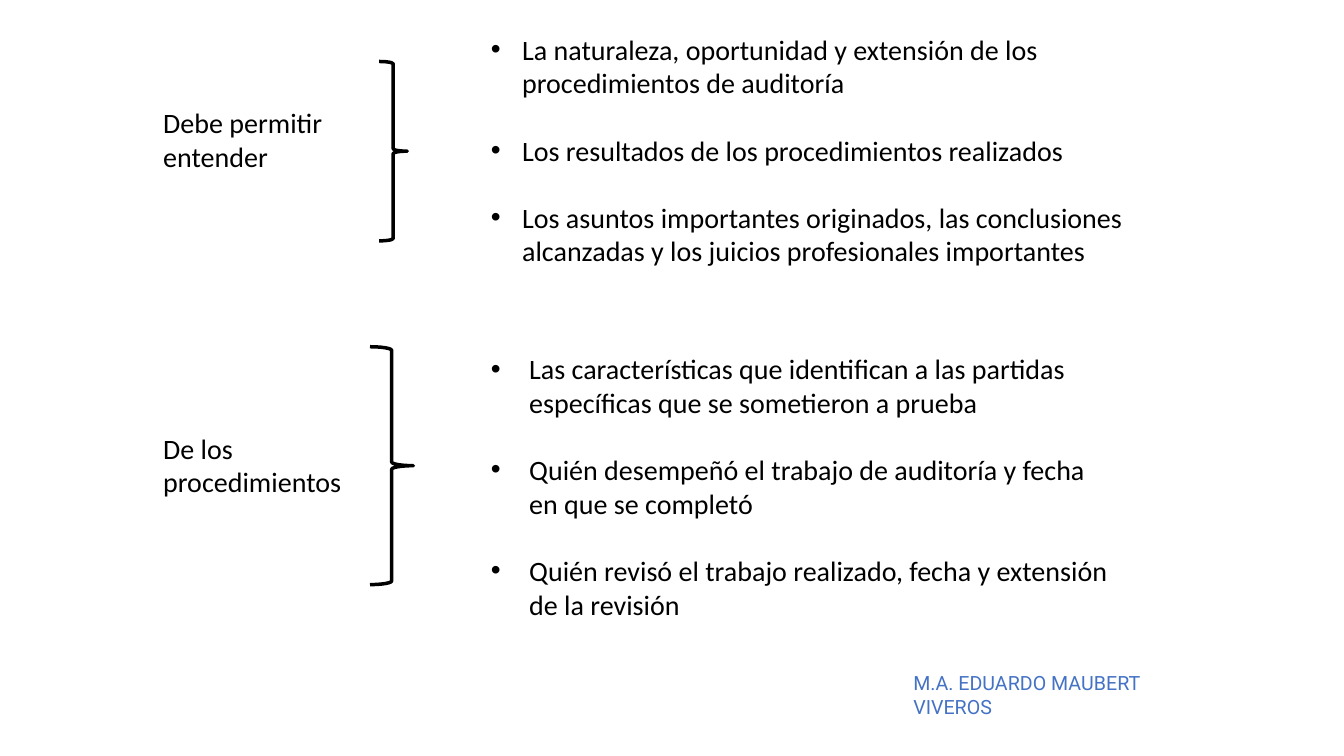
from dataclasses import dataclass

from lxml import etree
from pptx import Presentation
from pptx.dml.color import RGBColor
from pptx.enum.shapes import MSO_SHAPE
from pptx.enum.text import MSO_AUTO_SIZE
from pptx.oxml.ns import qn
from pptx.slide import Slide
from pptx.util import Inches, Pt

BRACE = MSO_SHAPE.RIGHT_BRACE
GROW = MSO_AUTO_SIZE.SHAPE_TO_FIT_TEXT
COLORS = {"ink": "000000", "blue": "4472C4"}

Rect = tuple[float, float, float, float]


@dataclass(frozen=True)
class Text:
    rect: Rect
    lines: tuple[str, ...]
    indent: float = 0
    font: str = "Calibri"
    size: int = 20
    color: str = "ink"


@dataclass(frozen=True)
class Group:
    label: Text
    brace: Rect
    points: Text


GROUPS = (
    Group(
        Text((1.52, 1, 1.81, 0.77), ("Debe permitir entender",)),
        (3.76, 0.61, 0.28, 1.78),
        Text((4.77, 0.27, 7.01, 2.46), (
            "La naturaleza, oportunidad y extensión de los procedimientos de auditoría",
            "Los resultados de los procedimientos realizados",
            "Los asuntos importantes originados, las conclusiones alcanzadas "
            "y los juicios profesionales importantes",
        ), 0.31),
    ),
    Group(
        Text((1.52, 4.23, 2.29, 0.77), ("De los procedimientos",)),
        (3.67, 3.44, 0.43, 2.36),
        Text((4.77, 3.44, 6.38, 2.79), (
            "Las características que identifican a las partidas específicas "
            "que se sometieron a prueba",
            "Quién desempeñó el trabajo de auditoría y fecha en que se completó",
            "Quién revisó el trabajo realizado, fecha y extensión de la revisión",
        ), 0.38),
    ),
)
AUTHOR = Text((8.96, 6.61, 3.16, 0.34), ("M.A. EDUARDO MAUBERT VIVEROS",),
              font="Roboto", size=14, color="blue")


def add_text(slide: Slide, text: Text) -> None:
    frame = slide.shapes.add_textbox(*map(Inches, text.rect)).text_frame
    frame.word_wrap = True
    frame.auto_size = GROW
    frame.text = "\n".join(text.lines)
    for para in frame.paragraphs:
        para.font.name = text.font
        para.font.size = Pt(text.size)
        para.font.color.rgb = RGBColor.from_string(COLORS[text.color])
        if text.indent:
            props = para._p.get_or_add_pPr()
            props.set("marL", str(Inches(text.indent)))
            props.set("indent", str(-Inches(text.indent)))
            etree.SubElement(props, qn("a:buFont")).set("typeface", "Arial")
            etree.SubElement(props, qn("a:buChar")).set("char", "•")
    for para in frame.paragraphs[:-1]:
        para.space_after = Pt(24)


def add_brace(slide: Slide, rect: Rect) -> None:
    brace = slide.shapes.add_shape(BRACE, *map(Inches, rect))
    brace.shadow.inherit = False
    brace.fill.background()
    brace.line.color.rgb = RGBColor.from_string(COLORS["ink"])
    brace.line.width = Pt(2.5)


def main() -> None:
    deck = Presentation()
    deck.slide_width = Inches(13.33)
    deck.slide_height = Inches(7.5)
    slide = deck.slides.add_slide(deck.slide_layouts[6])
    for group in GROUPS:
        add_text(slide, group.points)
        add_brace(slide, group.brace)
        add_text(slide, group.label)
    add_text(slide, AUTHOR)
    deck.save("out.pptx")


if __name__ == "__main__":
    main()
